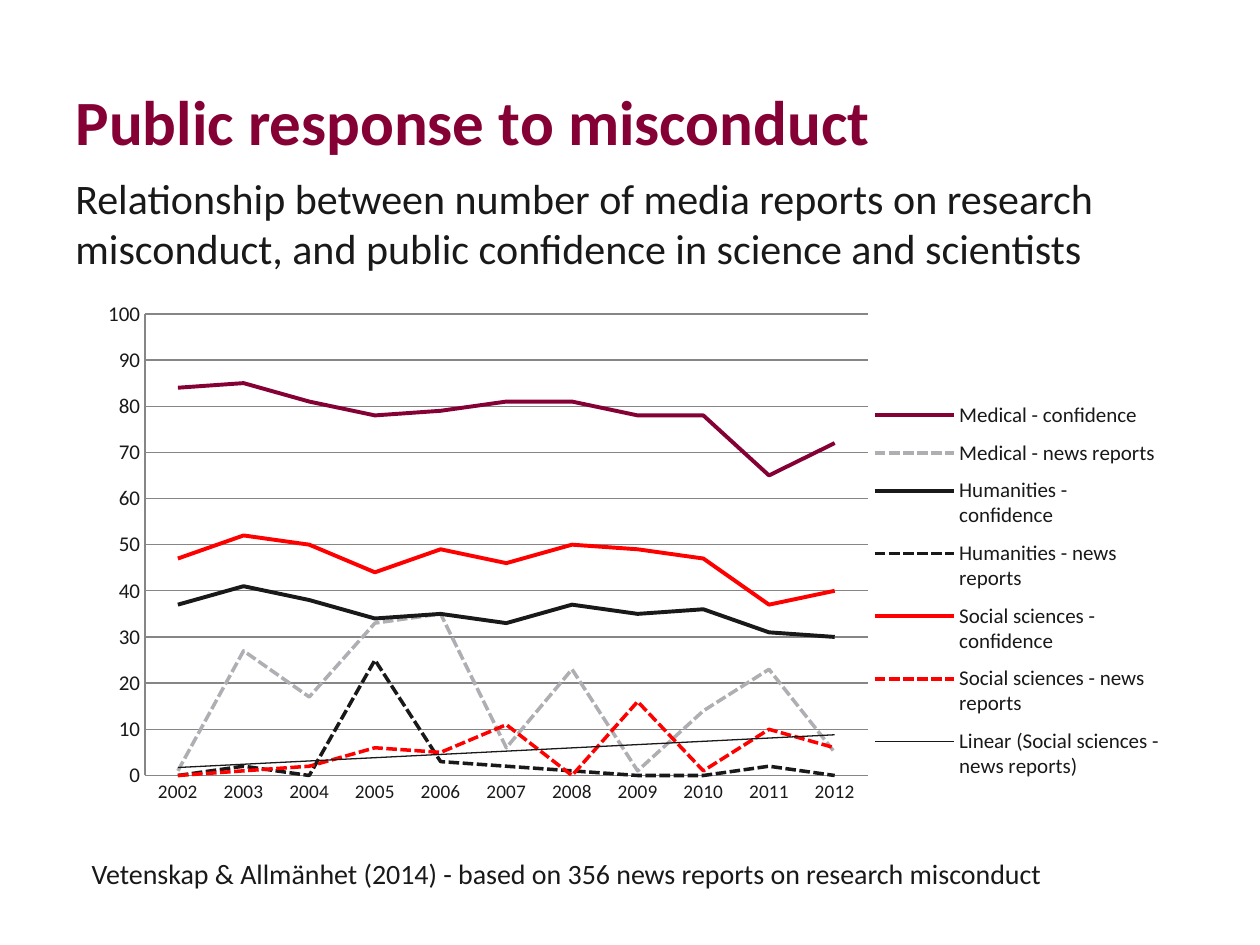
"""Build a slide on media reports of research misconduct and public confidence in science."""
from pptx import Presentation
from pptx.chart.data import CategoryChartData
from pptx.dml.color import RGBColor
from pptx.enum.chart import XL_CHART_TYPE, XL_LEGEND_POSITION, XL_TICK_MARK
from pptx.enum.dml import MSO_LINE
from pptx.enum.text import MSO_ANCHOR, PP_ALIGN
from pptx.oxml import parse_xml
from pptx.oxml.ns import nsdecls
from pptx.util import Cm, Pt

LINE_CHART = XL_CHART_TYPE.LINE
LEGEND_RIGHT = XL_LEGEND_POSITION.RIGHT
NO_TICK = XL_TICK_MARK.NONE
SOLID, DASHED = MSO_LINE.SOLID, MSO_LINE.SQUARE_DOT
MIDDLE, LEFT = MSO_ANCHOR.MIDDLE, PP_ALIGN.LEFT

FONT = "Calibri"
BURGUNDY = RGBColor(0x85, 0x00, 0x34)
SILVER = RGBColor(0xAF, 0xAE, 0xB3)
INK = RGBColor(0x19, 0x19, 0x19)
RED = RGBColor(0xFF, 0x00, 0x00)
GRID_GREY = RGBColor(0x86, 0x86, 0x86)

TREND_SOURCE = "Social sciences - news reports"
SERIES = [
    ("Medical - confidence", [84, 85, 81, 78, 79, 81, 81, 78, 78, 65, 72], BURGUNDY, SOLID),
    ("Medical - news reports", [1, 27, 17, 33, 35, 6, 23, 1, 14, 23, 5], SILVER, DASHED),
    ("Humanities - confidence", [37, 41, 38, 34, 35, 33, 37, 35, 36, 31, 30], INK, SOLID),
    ("Humanities - news reports", [0, 2, 0, 25, 3, 2, 1, 0, 0, 2, 0], INK, DASHED),
    ("Social sciences - confidence", [47, 52, 50, 44, 49, 46, 50, 49, 47, 37, 40], RED, SOLID),
    (TREND_SOURCE, [0, 1, 2, 6, 5, 11, 0, 16, 1, 10, 6], RED, DASHED),
]


def add_line(paragraph, text, size, color, bold=False):
    paragraph.alignment = LEFT
    run = paragraph.add_run()
    run.text = text
    run.font.name = FONT
    run.font.size = Pt(size)
    run.font.bold = bold
    run.font.color.rgb = color


def manual_layout(x, y, w, h, target=""):
    return parse_xml(
        f'<c:layout {nsdecls("c")}><c:manualLayout>{target}'
        '<c:xMode val="edge"/><c:yMode val="edge"/>'
        f'<c:x val="{x}"/><c:y val="{y}"/><c:w val="{w}"/><c:h val="{h}"/>'
        '</c:manualLayout></c:layout>'
    )


prs = Presentation()
prs.slide_width, prs.slide_height = Cm(25.4), Cm(19.05)
slide = prs.slides.add_slide(prs.slide_layouts[5])

title = slide.shapes.title
title.left, title.top, title.width, title.height = Cm(1.27), Cm(1.3), Cm(18.92), Cm(2.26)
title.text_frame.vertical_anchor = MIDDLE
add_line(title.text_frame.paragraphs[0], "Public response to misconduct", 36, BURGUNDY, True)

chart_data = CategoryChartData()
chart_data.categories = [str(year) for year in range(2002, 2013)]
for name, values, color, dash in SERIES:
    chart_data.add_series(name, values)
chart = slide.shapes.add_chart(
    LINE_CHART, Cm(1.6), Cm(5.89), Cm(22.07), Cm(10.95), chart_data
).chart
chart.has_title = False
chart.font.name = FONT
chart.font.size = Pt(10)
chart.font.color.rgb = INK

plot = chart.plots[0]
plot.vary_by_categories = False
for series, (name, values, color, dash) in zip(plot.series, SERIES):
    series.smooth = False
    series.format.line.color.rgb = color
    series.format.line.width = Pt(2.25 if dash == SOLID else 2)
    series.format.line.dash_style = dash
    if name == TREND_SOURCE:
        trend = parse_xml(
            f'<c:trendline {nsdecls("c", "a")}><c:name>Linear ({name})</c:name>'
            f'<c:spPr><a:ln w="{Pt(0.75)}"><a:solidFill><a:srgbClr val="{INK}"/></a:solidFill></a:ln></c:spPr>'
            '<c:trendlineType val="linear"/><c:dispRSqr val="0"/><c:dispEq val="0"/></c:trendline>'
        )
        series._element.xpath("c:cat")[0].addprevious(trend)

years, scale = chart.category_axis, chart.value_axis
for axis, size in ((years, 11), (scale, 12)):
    axis.major_tick_mark = axis.minor_tick_mark = NO_TICK
    axis.tick_labels.font.size = Pt(size)
    axis.format.line.color.rgb = GRID_GREY
    axis.format.line.width = Pt(0.75)
scale.minimum_scale, scale.maximum_scale, scale.major_unit = 0, 100, 10
scale.has_major_gridlines = True
scale.major_gridlines.format.line.color.rgb = GRID_GREY
scale.major_gridlines.format.line.width = Pt(0.75)

chart.has_legend = True
legend = chart.legend
legend.position = LEGEND_RIGHT
legend.include_in_layout = False
legend.font.size = Pt(12)
legend_xml = legend._element
for old_layout in legend_xml.xpath("c:layout"):
    legend_xml.remove(old_layout)
legend_xml.xpath("c:legendPos")[0].addnext(manual_layout(0.74, 0.18, 0.26, 0.74))

plot_area = chart._chartSpace.xpath("c:chart/c:plotArea")[0]
for old_layout in plot_area.xpath("c:layout"):
    plot_area.remove(old_layout)
plot_area.insert(0, manual_layout(0.06, 0.04, 0.66, 0.85, '<c:layoutTarget val="inner"/>'))

for left, top, width, height, size, lines in (
    (1.27, 3.35, 21.44, 2.31, 24, [
        "Relationship between number of media reports on research",
        "misconduct, and public confidence in science and scientists",
    ]),
    (1.6, 17.15, 20.04, 0.94, 16, [
        "Vetenskap & Allmänhet (2014) - based on 356 news reports on research misconduct",
    ]),
):
    frame = slide.shapes.add_textbox(Cm(left), Cm(top), Cm(width), Cm(height)).text_frame
    frame.word_wrap = False
    for index, text in enumerate(lines):
        add_line(frame.add_paragraph() if index else frame.paragraphs[0], text, size, INK)

prs.save("out.pptx")
